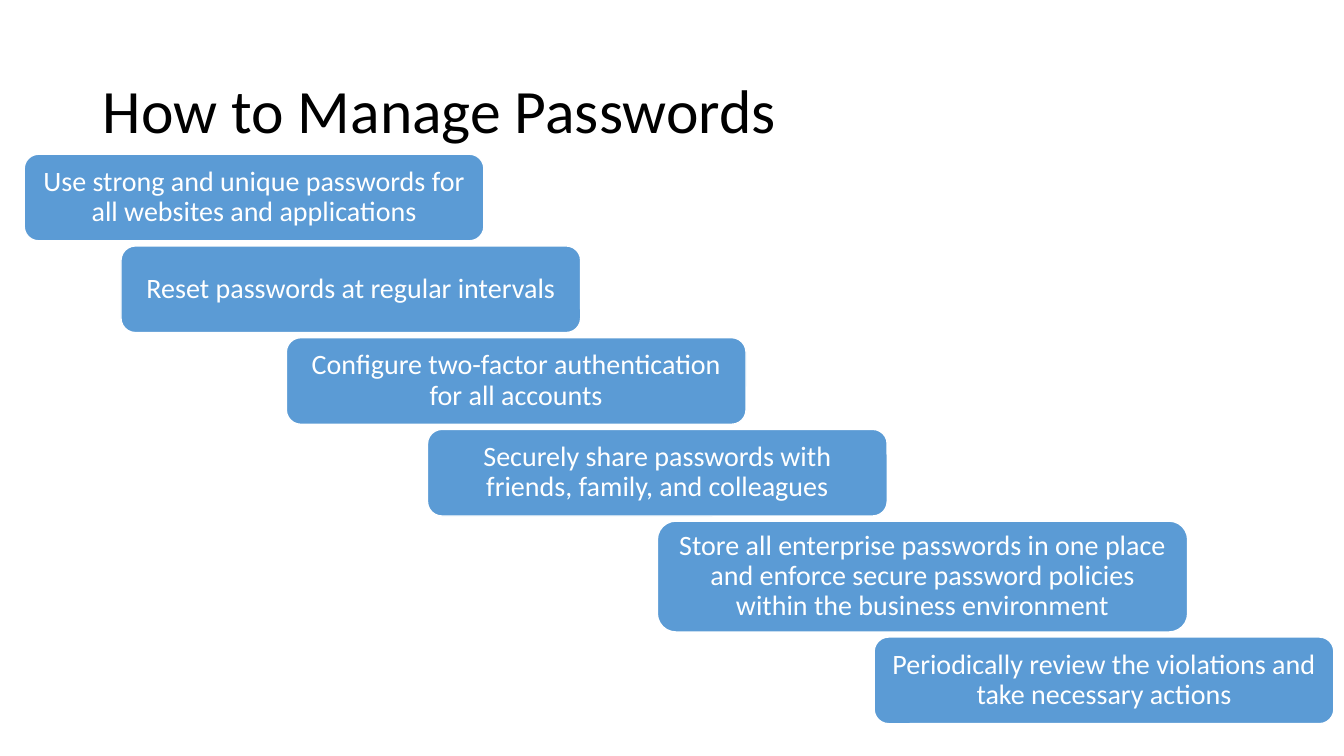
from pptx import Presentation
from pptx.dml.color import RGBColor
from pptx.enum.shapes import MSO_SHAPE
from pptx.enum.text import MSO_ANCHOR, MSO_AUTO_SIZE, PP_ALIGN
from pptx.util import Inches, Pt

BLACK = RGBColor(0x00, 0x00, 0x00)
WHITE = RGBColor(0xFF, 0xFF, 0xFF)
BLUE = RGBColor(0x5B, 0x9B, 0xD5)

TOP = 1.53
GAP = 0.05
STEP_WIDTH, STEP_HEIGHT = 4.56, 0.86


def write_text(shape, text, size, color, align):
    frame = shape.text_frame
    frame.word_wrap = True
    frame.auto_size = MSO_AUTO_SIZE.NONE
    frame.vertical_anchor = MSO_ANCHOR.MIDDLE
    para = frame.paragraphs[0]
    para.alignment = align
    para.line_spacing = 0.9
    span = para.add_run()
    span.text = text
    span.font.name = "Calibri"
    span.font.size = Pt(size)
    span.font.color.rgb = color


deck = Presentation()
deck.slide_width, deck.slide_height = Inches(13.33), Inches(7.5)
page = deck.slides.add_slide(deck.slide_layouts[5])

# Title
title = page.shapes.title
title.left, title.top = Inches(0.92), Inches(0.4)
title.width, title.height = Inches(11.5), Inches(1.45)
write_text(title, "How to Manage Passwords", 44, BLACK, PP_ALIGN.LEFT)

# Staircase of steps: left edge, width, height, text
steps = [
    (0.24, STEP_WIDTH, STEP_HEIGHT,
     "Use strong and unique passwords for all websites and applications"),
    (1.2, STEP_WIDTH, STEP_HEIGHT, "Reset passwords at regular intervals"),
    (2.84, STEP_WIDTH, STEP_HEIGHT,
     "Configure two-factor authentication for all accounts"),
    (4.24, STEP_WIDTH, STEP_HEIGHT,
     "Securely share passwords with friends, family, and colleagues"),
    (6.52, 5.26, 1.1,
     "Store all enterprise passwords in one place and enforce secure "
     "password policies within the business environment"),
    (8.67, STEP_WIDTH, STEP_HEIGHT,
     "Periodically review the violations and take necessary actions"),
]

top = TOP
for left, width, height, text in steps:
    box = page.shapes.add_shape(
        MSO_SHAPE.ROUNDED_RECTANGLE,
        Inches(left), Inches(top), Inches(width), Inches(height))
    box.shadow.inherit = False
    box.fill.solid()
    box.fill.fore_color.rgb = BLUE
    box.line.color.rgb = WHITE
    box.line.width = Pt(1)
    frame = box.text_frame
    frame.margin_left = frame.margin_right = Inches(0.1)
    frame.margin_top = frame.margin_bottom = Inches(0.07)
    write_text(box, text, 20, WHITE, PP_ALIGN.CENTER)
    top += height + GAP

deck.save("out.pptx")
